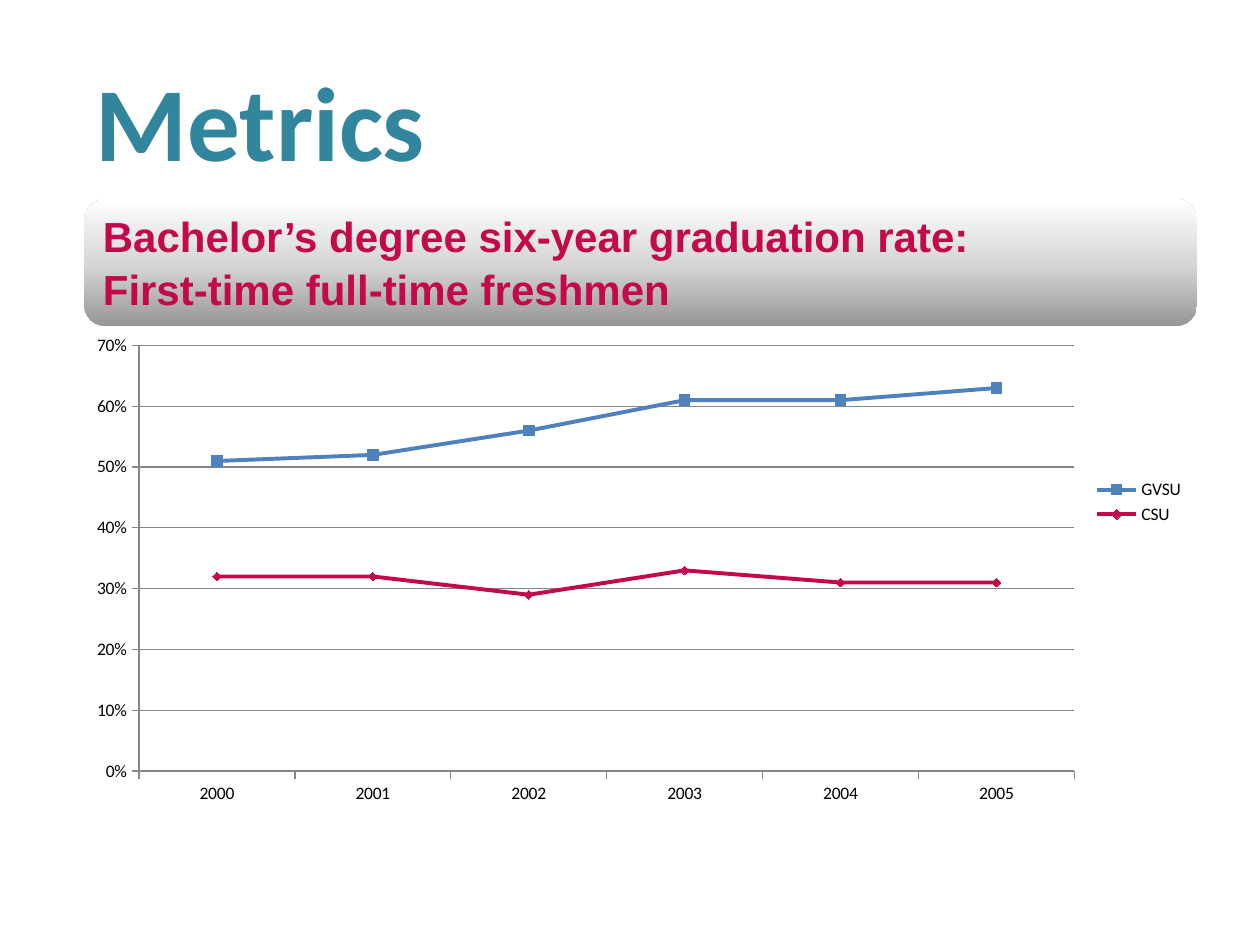
import pptx
import pptx.chart.data
import pptx.dml.color
import pptx.enum.chart
import pptx.enum.shapes
import pptx.enum.text
import pptx.oxml
import pptx.oxml.ns
import pptx.util
from pptx.util import Cm


def color(value):
    return pptx.dml.color.RGBColor.from_string(value)


def add_span(para, text, font, size, value):
    span = para.add_run()
    span.text = text
    span.font.name = font
    span.font.size = pptx.util.Pt(size)
    span.font.bold = True
    span.font.color.rgb = color(value)


TEAL, CRIMSON, BLUE, GRAY = "31859C", "C3094B", "4F81BD", "868686"

deck = pptx.Presentation()
deck.slide_width = Cm(25.4)
deck.slide_height = Cm(19.05)
page = deck.slides.add_slide(deck.slide_layouts[6])

# Title
title = page.shapes.add_textbox(Cm(1.68), Cm(1.02), Cm(22.28), Cm(2.03))
title.text_frame.word_wrap = True
add_span(title.text_frame.paragraphs[0], "Metrics", "Calibri", 60, TEAL)

# Graduation rate chart
rates = pptx.chart.data.CategoryChartData(number_format="0%")
rates.categories = [str(year) for year in range(2000, 2006)]
rates.add_series("GVSU", [0.51, 0.52, 0.56, 0.61, 0.61, 0.63])
rates.add_series("CSU", [0.32, 0.32, 0.29, 0.33, 0.31, 0.31])
chart = page.shapes.add_chart(
    pptx.enum.chart.XL_CHART_TYPE.LINE_MARKERS,
    Cm(1.68), Cm(3.81), Cm(22.45), Cm(12.62), rates).chart
chart.has_title = False
chart.font.name = "Calibri"
chart.font.size = pptx.util.Pt(10)
chart.font.color.rgb = color("000000")
chart.has_legend = True
chart.legend.position = pptx.enum.chart.XL_LEGEND_POSITION.RIGHT
chart.legend.include_in_layout = False
chart.plots[0].vary_by_categories = False

# Series lines and markers
markers = pptx.enum.chart.XL_MARKER_STYLE
styles = [(BLUE, markers.SQUARE, 6), (CRIMSON, markers.DIAMOND, 5)]
for series, (value, marker, size) in zip(chart.plots[0].series, styles):
    series.smooth = False
    series.format.line.color.rgb = color(value)
    series.format.line.width = pptx.util.Pt(2.25)
    series.marker.style = marker
    series.marker.size = size
    series.marker.format.fill.solid()
    series.marker.format.fill.fore_color.rgb = color(value)
    series.marker.format.line.color.rgb = color(value)

# Axes and gridlines
scale = chart.value_axis
scale.minimum_scale, scale.maximum_scale, scale.major_unit = 0, 0.7, 0.1
scale.tick_labels.number_format = "0%"
scale.tick_labels.number_format_is_linked = False
scale.has_major_gridlines = True
for axis in (scale, chart.category_axis):
    axis.major_tick_mark = pptx.enum.chart.XL_TICK_MARK.OUTSIDE
for part in (scale, chart.category_axis, scale.major_gridlines):
    part.format.line.color.rgb = color(GRAY)
    part.format.line.width = pptx.util.Pt(0.75)

# Fixed inner plot area, as fractions of the chart
plot_area = chart.plots[0]._element.getparent()
for old in plot_area.findall(pptx.oxml.ns.qn("c:layout")):
    plot_area.remove(old)
places = [("layoutTarget", "inner"), ("xMode", "edge"), ("yMode", "edge"),
          ("x", 0.05), ("y", 0.25), ("w", 0.84), ("h", 0.68)]
plot_area.insert(0, pptx.oxml.parse_xml(
    f'<c:layout {pptx.oxml.ns.nsdecls("c")}><c:manualLayout>'
    + "".join(f'<c:{name} val="{value}"/>' for name, value in places)
    + "</c:manualLayout></c:layout>"))

# Subtitle banner with a three-stop gradient
banner = page.shapes.add_shape(
    pptx.enum.shapes.MSO_SHAPE.ROUNDED_RECTANGLE,
    Cm(1.7), Cm(4.01), Cm(22.43), Cm(2.57))
banner.shadow.inherit = False
banner.line.fill.background()
banner.fill.gradient()
banner.fill.gradient_angle = 90
stops = banner._element.spPr.find(".//" + pptx.oxml.ns.qn("a:gsLst"))
for stop in list(stops):
    stops.remove(stop)
for percent, value in [(0, "979797"), (50, "D7D7D7"), (100, "FFFFFF")]:
    stops.append(pptx.oxml.parse_xml(
        f'<a:gs {pptx.oxml.ns.nsdecls("a")} pos="{percent * 1000}">'
        f'<a:srgbClr val="{value}"/></a:gs>'))

# Banner text
frame = banner.text_frame
frame.word_wrap = True
frame.vertical_anchor = pptx.enum.text.MSO_ANCHOR.MIDDLE
frame.margin_left = Cm(0.25)
lines = ["Bachelor’s degree six-year graduation rate:",
         "First-time full-time freshmen"]
for index, text in enumerate(lines):
    para = frame.add_paragraph() if index else frame.paragraphs[0]
    para.alignment = pptx.enum.text.PP_ALIGN.LEFT
    if index:
        para.space_before = pptx.util.Pt(1.5)
    add_span(para, text, "Arial", 24, CRIMSON)

deck.save("out.pptx")
